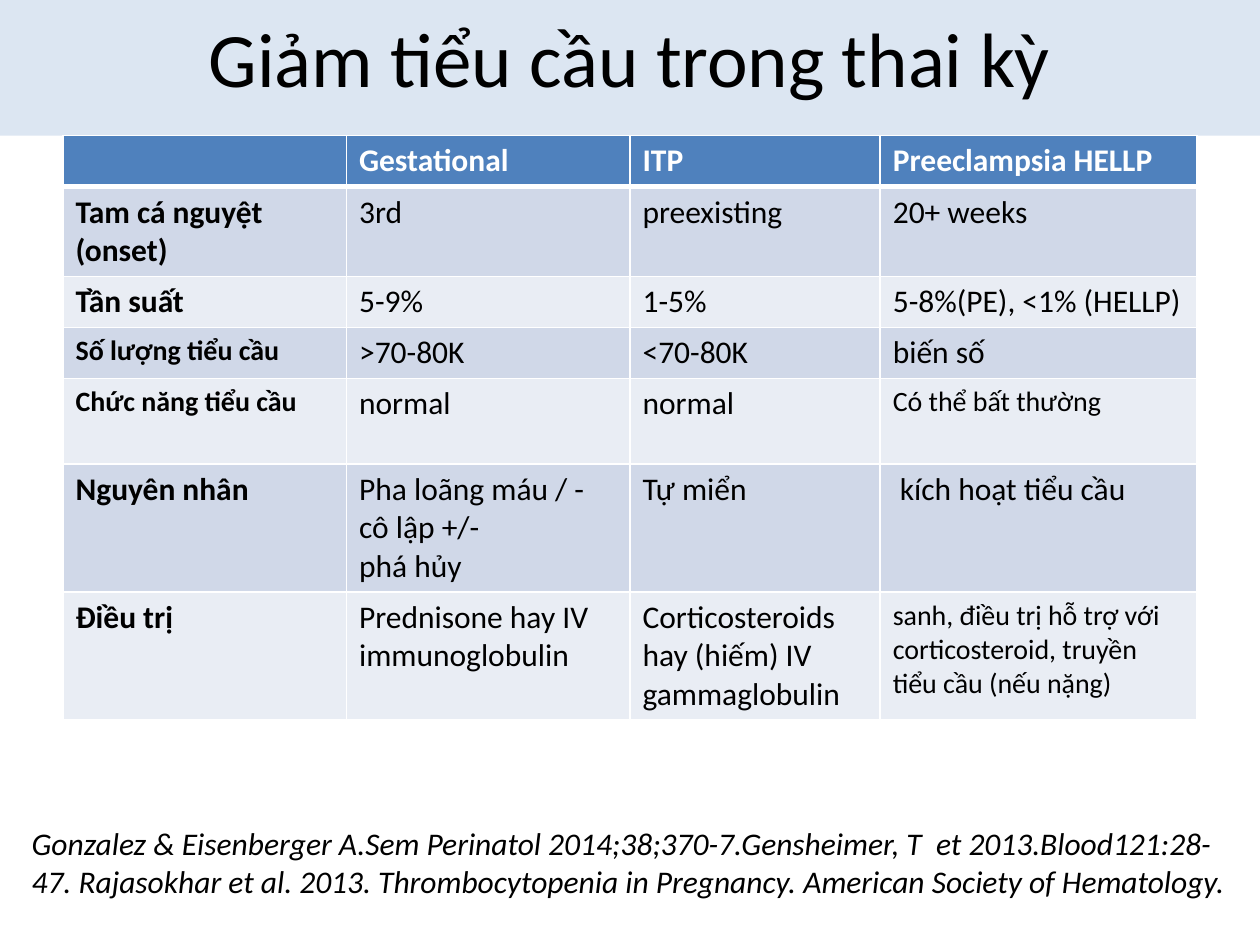
from dataclasses import dataclass
from lxml.etree import SubElement
from pptx import Presentation
from pptx.dml.color import RGBColor
from pptx.enum.shapes import MSO_SHAPE
from pptx.enum.text import MSO_ANCHOR, PP_ALIGN
from pptx.oxml.ns import qn
from pptx.util import Pt


@dataclass(frozen=True)
class Theme:
    font: str = "Calibri"
    ink: str = "000000"
    white: str = "FFFFFF"
    banner: str = "DCE6F2"
    header: str = "4F81BD"
    bands: tuple = ("D0D8E8", "E9EDF4")
    title: int = 44
    body: int = 18
    small: int = 16


class Deck:
    def __init__(self, prs, theme):
        self.theme = theme
        self.slide = prs.slides.add_slide(prs.slide_layouts[6])

    def label(self, frame, text, size, color=None, bold=False, italic=False,
              align=PP_ALIGN.LEFT):
        frame.word_wrap = True
        for i, line in enumerate(text.split("\n")):
            para = frame.paragraphs[0] if i == 0 else frame.add_paragraph()
            para.text = line
            para.alignment = align
            font = para.font
            font.name, font.size = self.theme.font, Pt(size)
            font.bold, font.italic = bold, italic
            font.color.rgb = RGBColor.from_string(color or self.theme.ink)

    def banner(self, text, box):
        shape = self.slide.shapes.add_shape(MSO_SHAPE.RECTANGLE, *map(Pt, box))
        shape.shadow.inherit = False
        shape.fill.solid()
        shape.fill.fore_color.rgb = RGBColor.from_string(self.theme.banner)
        shape.line.fill.background()
        shape.text_frame.vertical_anchor = MSO_ANCHOR.MIDDLE
        self.label(shape.text_frame, text, self.theme.title, align=PP_ALIGN.CENTER)

    def note(self, text, box):
        shape = self.slide.shapes.add_textbox(*map(Pt, box))
        self.label(shape.text_frame, text, self.theme.body, italic=True)

    def border(self, cell, tag, width):
        line = SubElement(cell._tc.get_or_add_tcPr(), qn(f"a:{tag}"), w=str(Pt(width)))
        fill = SubElement(line, qn("a:solidFill"))
        SubElement(fill, qn("a:srgbClr"), val=self.theme.white)

    def cell(self, cell, text, row, col, small):
        theme, head = self.theme, row == 0
        for tag in ("lnL", "lnR", "lnT", "lnB"):
            thick = (head and tag == "lnB") or (row == 1 and tag == "lnT")
            self.border(cell, tag, 3 if thick else 1)
        cell.fill.solid()
        color = theme.header if head else theme.bands[(row - 1) % 2]
        cell.fill.fore_color.rgb = RGBColor.from_string(color)
        self.label(cell.text_frame, text, theme.small if small else theme.body,
                   theme.white if head else theme.ink, bold=head or col == 0)

    def table(self, rows, left, top, widths, heights, small):
        size = len(rows), len(widths)
        frame = self.slide.shapes.add_table(
            *size, Pt(left), Pt(top), Pt(sum(widths)), Pt(sum(heights)))
        grid = frame.table
        for col, width in zip(grid.columns, widths):
            col.width = Pt(width)
        for r, (texts, height) in enumerate(zip(rows, heights)):
            grid.rows[r].height = Pt(height)
            for c, text in enumerate(texts):
                self.cell(grid.cell(r, c), text, r, c, (r, c) in small)


ROWS = [
    ("", "Gestational", "ITP", "Preeclampsia HELLP"),
    ("Tam cá nguyệt\n(onset)", "3rd", "preexisting", "20+ weeks"),
    ("Tần suất", "5-9%", "1-5%", "5-8%(PE), <1% (HELLP)"),
    ("Số lượng tiểu cầu", ">70-80K", "<70-80K", "biến số"),
    ("Chức năng tiểu cầu", "normal", "normal", "Có thể bất thường"),
    ("Nguyên nhân", "Pha loãng máu / -\ncô lập +/-\nphá hủy", "Tự miển",
     " kích hoạt tiểu cầu"),
    ("Điều trị", "Prednisone hay IV\nimmunoglobulin",
     "Corticosteroids hay (hiếm) IV gammaglobulin",
     "sanh, điều trị hỗ trợ với corticosteroid, truyền tiểu cầu (nếu nặng)"),
]
SMALL = {(3, 0), (4, 0), (4, 3), (6, 3)}
SOURCE = ("Gonzalez & Eisenberger A.Sem Perinatol 2014;38;370-7.Gensheimer, T  et "
          "2013.Blood121:28-47. Rajasokhar et al. 2013. Thrombocytopenia in "
          "Pregnancy. American Society of Hematology.")


def main():
    prs = Presentation()
    prs.slide_width, prs.slide_height = Pt(720), Pt(540)
    deck = Deck(prs, Theme())
    deck.banner("Giảm tiểu cầu trong thai kỳ", (0, -12.5, 720, 90))
    deck.table(ROWS, 36, 77.5, (162, 162, 143, 181),
               (29.2, 51, 29.2, 29.2, 49, 73, 73), SMALL)
    deck.note(SOURCE, (11, 467.5, 709, 72.5))
    prs.save("out.pptx")


if __name__ == "__main__":
    main()
